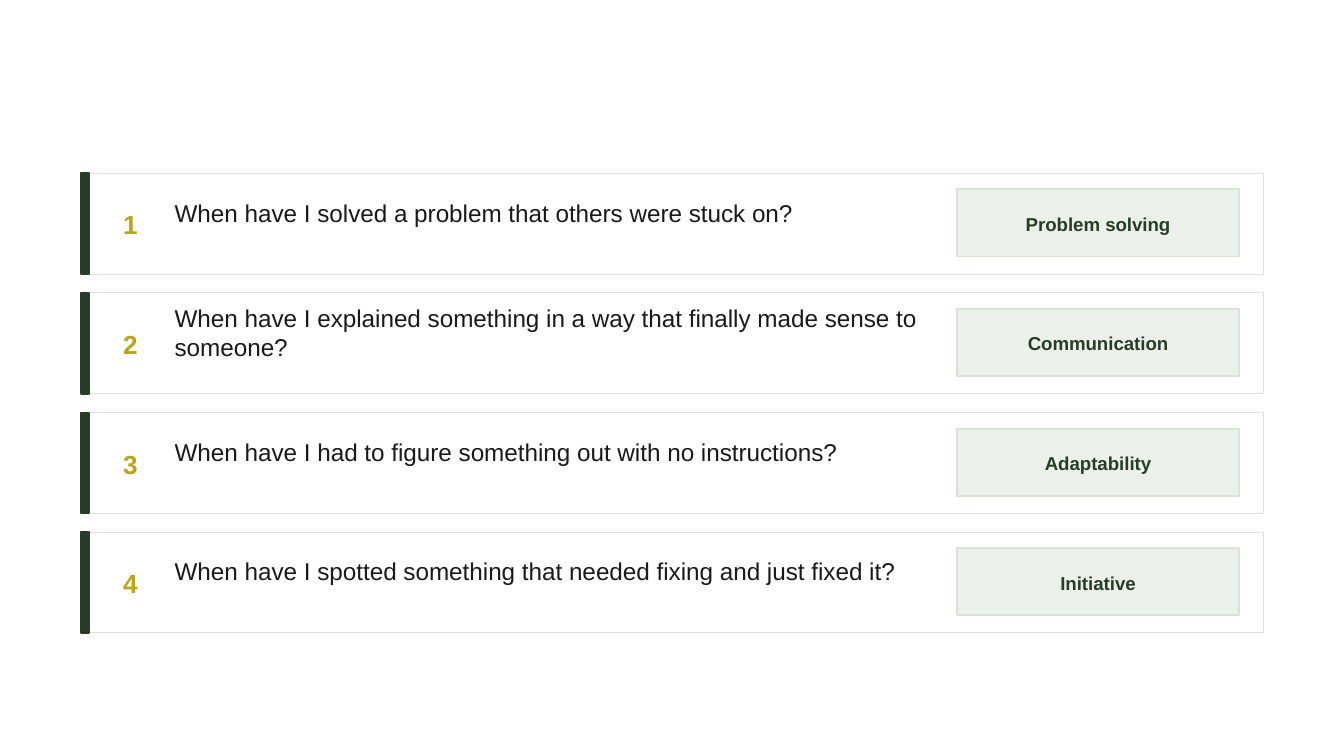
import pptx
import pptx.dml.color
import pptx.enum.shapes
import pptx.enum.text
import pptx.util

Inches = pptx.util.Inches
Pt = pptx.util.Pt
ALIGN = pptx.enum.text.PP_ALIGN

HUES = {
    "white": "FFFFFF",
    "edge": "E0E0E0",
    "green": "273D27",
    "gold": "BEA219",
    "ink": "1A1A1A",
    "pale": "EBF0EB",
    "rim": "D8E4D8",
}

# Question, its line count, skill
ROWS = [
    ("When have I solved a problem that others were stuck on?", 1, "Problem solving"),
    ("When have I explained something in a way that finally made sense to someone?",
     2, "Communication"),
    ("When have I had to figure something out with no instructions?", 1, "Adaptability"),
    ("When have I spotted something that needed fixing and just fixed it?", 1, "Initiative"),
]
WIDE = 10
LEFT, TOP, WIDTH, HEIGHT = 0.6, 1.29, 8.8, 0.75
STEP = 0.89
LINE = 0.2


def hue(name):
    return pptx.dml.color.RGBColor.from_string(HUES[name])


def add_box(slide, x, y, w, h, fill, edge, weight=1):
    box = slide.shapes.add_shape(
        pptx.enum.shapes.MSO_SHAPE.RECTANGLE,
        Inches(x), Inches(y), Inches(w), Inches(h))
    box.shadow.inherit = False
    box.fill.solid()
    box.fill.fore_color.rgb = hue(fill)
    box.line.color.rgb = hue(edge)
    box.line.width = Pt(weight)


def add_text(slide, x, y, w, h, text, size, color, bold=True, align=ALIGN.CENTER):
    frame = slide.shapes.add_textbox(
        Inches(x), Inches(y), Inches(w), Inches(h)).text_frame
    frame.word_wrap = True
    frame.auto_size = pptx.enum.text.MSO_AUTO_SIZE.SHAPE_TO_FIT_TEXT
    frame.vertical_anchor = pptx.enum.text.MSO_ANCHOR.MIDDLE
    frame.margin_left = frame.margin_right = 0
    frame.margin_top = frame.margin_bottom = 0
    para = frame.paragraphs[0]
    para.text = text
    para.alignment = align
    para.font.name = "Arial"
    para.font.size = Pt(size)
    para.font.bold = bold
    para.font.color.rgb = hue(color)


def add_row(slide, num, y, ask, lines, skill):
    # Card with accent bar
    add_box(slide, LEFT, y, WIDTH, HEIGHT, "white", "edge", 0.5)
    add_box(slide, LEFT, y, 0.06, HEIGHT, "green", "green")
    # Number and question, centred on a fixed height
    add_text(slide, 0.78, y + 0.27, 0.38, 0.22, str(num), 14, "gold")
    high = LINE * lines
    add_text(slide, 1.3, y + 0.29 - high / 2, 5.7, high, ask, 13, "ink",
             bold=False, align=ALIGN.LEFT)
    # Skill tag
    add_box(slide, 7.12, y + 0.12, 2.1, 0.5, "pale", "rim")
    add_text(slide, 7.12, y + 0.3, 2.1, 0.15, skill, 10, "green")


def main():
    deck = pptx.Presentation()
    # Widescreen page, 16:9
    deck.slide_width = Inches(WIDE)
    deck.slide_height = Inches(WIDE * 9 / 16)
    slide = deck.slides.add_slide(deck.slide_layouts[6])
    slide.background.fill.solid()
    slide.background.fill.fore_color.rgb = hue("white")
    for i, (ask, lines, skill) in enumerate(ROWS):
        add_row(slide, i + 1, TOP + i * STEP, ask, lines, skill)
    deck.save("out.pptx")


if __name__ == "__main__":
    main()
